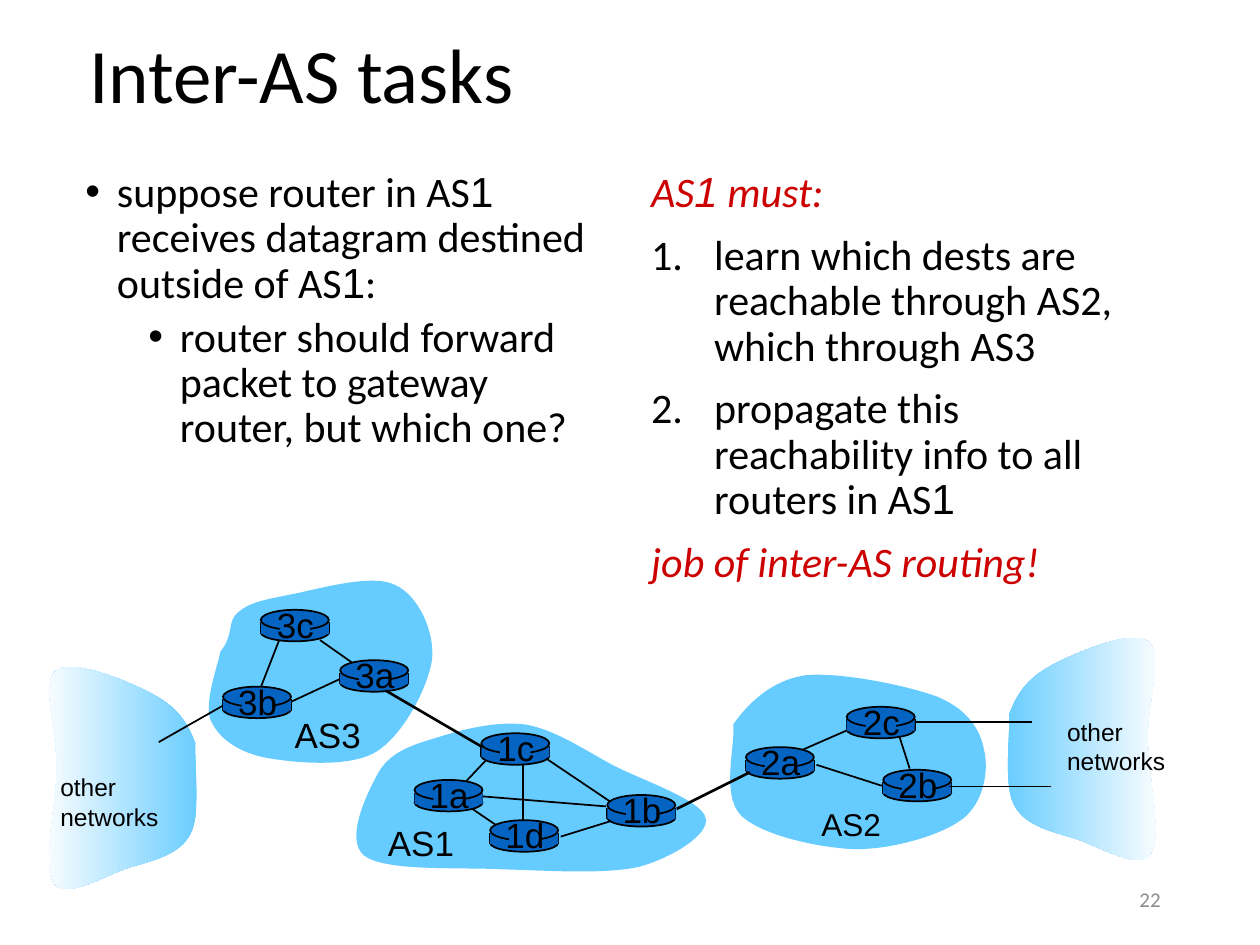
"""Build the Inter-AS tasks slide: two text columns above a diagram of connected networks."""
from dataclasses import dataclass

from lxml import etree
from pptx import Presentation
from pptx.dml.color import RGBColor
from pptx.enum.shapes import MSO_CONNECTOR, MSO_SHAPE
from pptx.enum.text import MSO_ANCHOR, MSO_AUTO_SIZE, PP_ALIGN
from pptx.oxml.ns import qn
from pptx.util import Pt

STRAIGHT = MSO_CONNECTOR.STRAIGHT
OVAL, RECTANGLE = MSO_SHAPE.OVAL, MSO_SHAPE.RECTANGLE
TOP, MIDDLE = MSO_ANCHOR.TOP, MSO_ANCHOR.MIDDLE
GROW = MSO_AUTO_SIZE.SHAPE_TO_FIT_TEXT
LEFT, CENTER, RIGHT = PP_ALIGN.LEFT, PP_ALIGN.CENTER, PP_ALIGN.RIGHT
EMU_PER_PX = 9144


@dataclass(frozen=True)
class Theme:
    """Colours, fonts and type sizes of the slide."""
    ink: str = "000000"
    accent: str = "CC0000"
    muted: str = "8C8C8C"
    cloud: str = "66CCFF"
    fade: str = "FFFFFF"
    router: str = "0563C1"
    main_font: str = "Calibri"
    label_font: str = "Arial"
    title_size: int = 44
    body_size: int = 24
    label_size: int = 20
    small_label_size: int = 18
    note_size: int = 14
    number_size: int = 12


THEME = Theme()

AS1_CLOUD = [
    (301, 612), (311, 596), (328, 591), (348, 585), (367, 579), (394, 572), (417, 575),
    (440, 579), (462, 594), (486, 607), (509, 619), (557, 635), (560, 649),
    (564, 662), (533, 681), (507, 688), (480, 694), (436, 691), (400, 690),
    (364, 688), (306, 692), (289, 679), (273, 666), (292, 628), (301, 612)]
AS2_CLOUD = [
    (582, 575), (593, 559), (612, 540), (639, 536), (666, 533), (720, 544), (744, 553),
    (768, 563), (778, 579), (781, 595), (785, 611), (781, 637), (764, 650),
    (747, 663), (709, 674), (679, 674), (650, 673), (604, 663), (588, 647),
    (572, 631), (584, 590), (582, 575)]
AS3_CLOUD = [
    (175, 517), (186, 504), (180, 493), (189, 486), (198, 478), (210, 476), (230, 472),
    (251, 468), (294, 455), (313, 464), (332, 472), (345, 501), (343, 523),
    (340, 545), (320, 584), (298, 597), (276, 610), (230, 605), (209, 601),
    (187, 596), (173, 585), (167, 571), (162, 557), (173, 528), (175, 517)]
OTHER_CLOUD = [
    (801, 567), (807, 551), (815, 539), (833, 529), (851, 519), (898, 499), (911, 509),
    (924, 518), (910, 559), (911, 587), (911, 616), (923, 665), (913, 678),
    (904, 691), (873, 672), (855, 666), (836, 660), (814, 656), (805, 639),
    (796, 623), (802, 582), (801, 567)]

ROUTERS = {
    "3b": (177, 545), "3c": (207, 484), "3a": (270, 524),
    "1c": (382, 582), "1a": (329, 619), "1d": (389, 651), "1b": (482, 631),
    "2a": (592, 593), "2c": (672, 561), "2b": (701, 611)}
INNER_LINKS = [
    (231, 557, 274, 537), (281, 527, 254, 508), (222, 507, 206, 548),
    (387, 602, 370, 620), (415, 606, 415, 656), (432, 601, 487, 638),
    (487, 651, 445, 664), (481, 640, 382, 632), (372, 640, 394, 655),
    (628, 599, 676, 578), (648, 607, 701, 624), (714, 585, 722, 610)]
OUTER_LINKS = [
    (726, 573, 819, 573, 0.75), (753, 624, 834, 624, 0.75), (177, 560, 126, 589, 1),
    (537, 642, 595, 613, 1.5), (306, 548, 383, 593, 1.5)]


def px(length):
    """Turn px into EMU."""
    return round(length * EMU_PER_PX)


def rgb(code):
    """Give the colour object of a hex code."""
    return RGBColor.from_string(code)


def add_run(paragraph, text, size, font, color=THEME.ink, italic=False):
    """Add one formatted run."""
    run = paragraph.add_run()
    run.text = text
    run.font.size, run.font.name, run.font.italic = Pt(size), font, italic
    run.font.color.rgb = rgb(color)


def add_frame(shapes, box, anchor=TOP, grow=False):
    """Add an empty text box and return its text frame."""
    frame = shapes.add_textbox(*map(px, box)).text_frame
    frame.word_wrap, frame.vertical_anchor = not grow, anchor
    if grow:
        frame.auto_size = GROW
    return frame


def add_label(shapes, box, lines, size, align=LEFT):
    """Add an unwrapped diagram label with one paragraph per line."""
    frame = add_frame(shapes, box, grow=True)
    for index, line in enumerate(lines):
        paragraph = frame.add_paragraph() if index else frame.paragraphs[0]
        paragraph.alignment = align
        add_run(paragraph, line, size, THEME.label_font)


def add_line_of_text(shapes, box, text, size, color, align=LEFT):
    """Add a single vertically centred line such as the title."""
    paragraph = add_frame(shapes, box, MIDDLE).paragraphs[0]
    paragraph.alignment, paragraph.line_spacing = align, 0.9
    add_run(paragraph, text, size, THEME.main_font, color)


def set_marker(paragraph, margin, hanging, marker):
    """Set a hanging indent and a bullet, number or no marker."""
    properties = paragraph._p.get_or_add_pPr()
    properties.set("marL", str(px(margin)))
    properties.set("indent", str(-px(hanging)))
    if marker == "bullet":
        etree.SubElement(properties, qn("a:buFont")).set("typeface", THEME.label_font)
        etree.SubElement(properties, qn("a:buChar")).set("char", "•")
    elif marker == "number":
        etree.SubElement(properties, qn("a:buAutoNum")).set("type", "arabicPeriod")
    else:
        etree.SubElement(properties, qn("a:buNone"))


def add_column(shapes, box, items):
    """Add a body column, with each digit 1 in the label font."""
    frame = add_frame(shapes, box)
    for index, (text, margin, hanging, marker, before) in enumerate(items):
        paragraph = frame.add_paragraph() if index else frame.paragraphs[0]
        paragraph.line_spacing, paragraph.space_before = 0.9, Pt(before)
        set_marker(paragraph, margin, hanging, marker)
        color = THEME.ink if marker else THEME.accent
        for part, piece in enumerate(text.replace("1", "|1|").split("|")):
            if piece:
                font = THEME.label_font if part % 2 else THEME.main_font
                add_run(paragraph, piece, THEME.body_size, font, color, not marker)


def add_link(shapes, start_x, start_y, end_x, end_y, width=1):
    """Add a straight black link."""
    link = shapes.add_connector(STRAIGHT, *map(px, (start_x, start_y, end_x, end_y)))
    link.line.color.rgb, link.line.width = rgb(THEME.ink), Pt(width)
    etree.SubElement(link._element.spPr, qn("a:effectLst"))


def add_cloud(shapes, outline):
    """Add a network cloud from a start point followed by cubic curve triples."""
    points = [(px(x), px(y)) for x, y in outline]
    builder = shapes.build_freeform(*points[0])
    builder.add_line_segments(points[1:], close=True)
    cloud = builder.convert_to_shape()
    segments = list(cloud._element.iter(qn("a:lnTo")))
    for first in range(0, len(segments), 3):
        curve = etree.Element(qn("a:cubicBezTo"))
        segments[first].addprevious(curve)
        for segment in segments[first:first + 3]:
            curve.append(segment[0])
            segment.getparent().remove(segment)
    cloud.shadow.inherit = False
    cloud.line.fill.background()
    cloud.fill.solid()
    cloud.fill.fore_color.rgb = rgb(THEME.cloud)
    return cloud


def add_fading_cloud(shapes, outline):
    """Add a cloud that fades out to the right."""
    cloud = add_cloud(shapes, outline)
    cloud.fill.gradient()
    cloud.fill.gradient_angle = 0
    for stop, color in zip(cloud.fill.gradient_stops, (THEME.cloud, THEME.fade)):
        stop.color.rgb = rgb(color)
    return cloud


def add_router_part(shapes, kind, box):
    """Add a router face, outlined when it is an ellipse."""
    part = shapes.add_shape(kind, *map(px, box))
    part.shadow.inherit = False
    part.fill.solid()
    part.fill.fore_color.rgb = rgb(THEME.router)
    if kind == OVAL:
        part.line.color.rgb, part.line.width = rgb(THEME.ink), Pt(1)
    else:
        part.line.fill.background()


def add_router(shapes, name, left, top):
    """Add a grouped cylinder router with its name."""
    router = shapes.add_group_shape().shapes
    add_router_part(router, OVAL, (left, top + 11, 54, 14))
    for side in (left, left + 54):
        add_link(router, side, top + 10, side, top + 19)
    add_router_part(router, RECTANGLE, (left, top + 10, 54, 9))
    add_router_part(router, OVAL, (left, top, 54, 16))
    add_router_part(router, RECTANGLE, (left + 15, top + 3, 24, 20))
    add_label(router, (left + 2, top - 10, 51, 43), [name], THEME.label_size, CENTER)


def main():
    """Compose the slide and save it."""
    deck = Presentation()
    deck.slide_width, deck.slide_height = px(1000), px(750)
    shapes = deck.slides.add_slide(deck.slide_layouts[6]).shapes
    add_line_of_text(shapes, (61, 0, 850, 125), "Inter-AS tasks", THEME.title_size, THEME.ink)
    add_column(shapes, (58, 131, 417, 319), [
        ("suppose router in AS1 receives datagram destined outside of AS1:", 25, 25, "bullet", 10),
        ("router should forward packet to gateway router, but which one?", 75, 25, "bullet", 5)])
    add_column(shapes, (507, 131, 417, 508), [
        ("AS1 must:", 50, 50, None, 10),
        ("learn which dests are reachable through AS2, which through AS3", 50, 50, "number", 10),
        ("propagate this reachability info to all routers in AS1", 50, 50, "number", 10),
        ("job of inter-AS routing!", 50, 50, None, 10)])
    for outline in (AS2_CLOUD, AS3_CLOUD, AS1_CLOUD):
        add_cloud(shapes, outline)
    add_fading_cloud(shapes, OTHER_CLOUD)
    left_cloud = add_fading_cloud(shapes, [(x - 764, y + 23) for x, y in OTHER_CLOUD])
    left_cloud._element.spPr.find(qn("a:xfrm")).set("flipH", "1")
    for link in INNER_LINKS:
        add_link(shapes, *link)
    for name, (left, top) in ROUTERS.items():
        add_router(shapes, name, left, top)
    for link in OUTER_LINKS:
        add_link(shapes, *link)
    add_label(shapes, (298, 647, 73, 43), ["AS1"], THEME.label_size)
    add_label(shapes, (642, 634, 67, 40), ["AS2"], THEME.small_label_size)
    add_label(shapes, (224, 561, 73, 43), ["AS3"], THEME.label_size)
    for left, top in ((837, 564), (38, 608)):
        add_label(shapes, (left, top, 98, 57), ["other", "networks"], THEME.note_size)
    add_line_of_text(shapes, (706, 695, 225, 40), "22", THEME.number_size, THEME.muted, RIGHT)
    deck.save("out.pptx")


if __name__ == "__main__":
    main()
